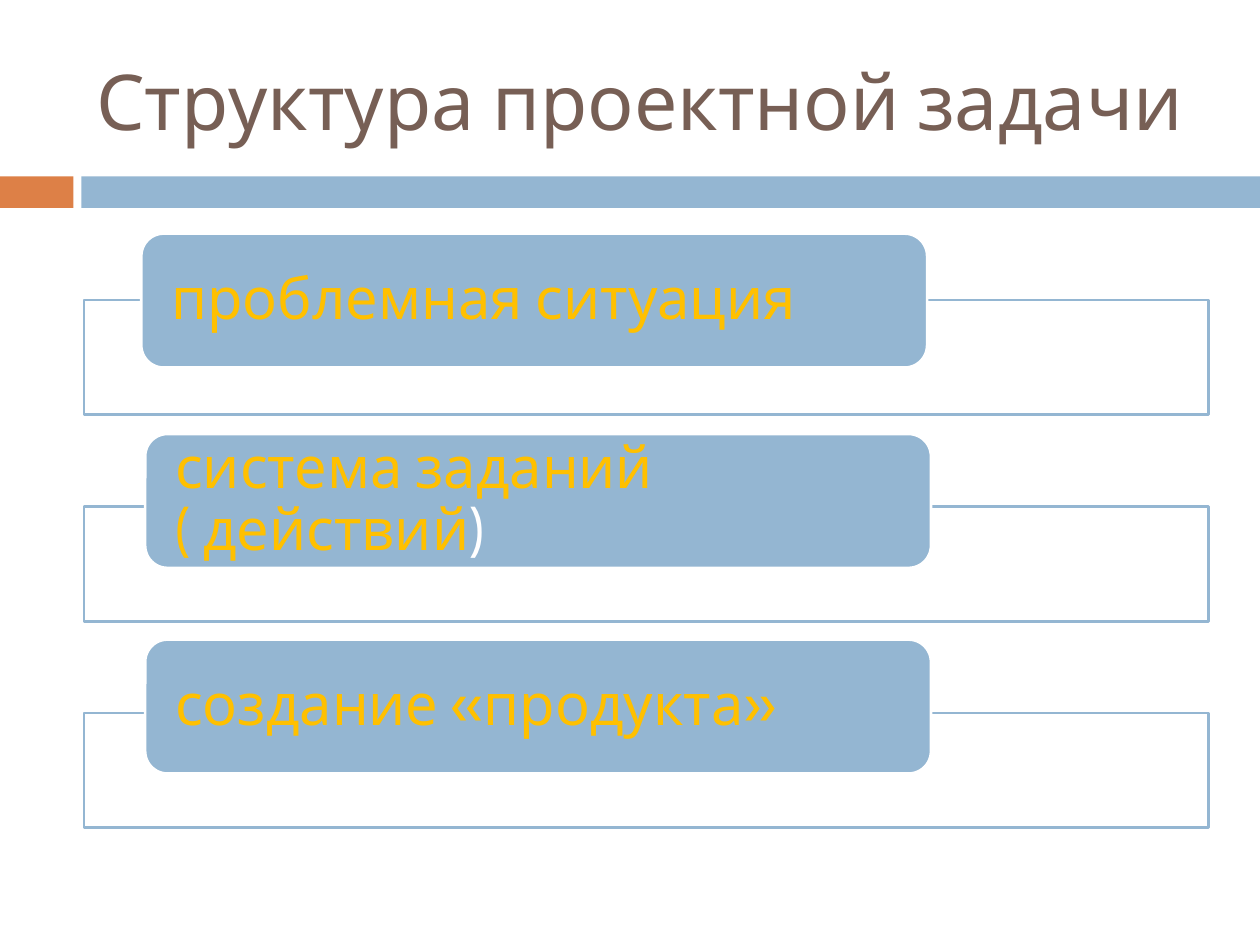
from dataclasses import dataclass

from lxml.etree import SubElement
from pptx import Presentation
from pptx.dml.color import RGBColor
from pptx.enum.shapes import MSO_SHAPE
from pptx.enum.text import MSO_ANCHOR, PP_ALIGN
from pptx.oxml.ns import qn
from pptx.util import Pt


@dataclass(frozen=True)
class Theme:
    font: str = "Cabin"
    title_size: int = 44
    label_size: int = 33
    brown: str = "775F55"
    orange: str = "DD8047"
    blue: str = "94B6D2"
    gold: str = "FFC000"
    white: str = "FFFFFF"


class SlideBuilder:
    def __init__(self, slide, theme):
        self.slide = slide
        self.theme = theme

    def box(self, kind, bounds, fill, line=None):
        shape = self.slide.shapes.add_shape(kind, *map(Pt, bounds))
        shape.shadow.inherit = False
        shape.fill.solid()
        shape.fill.fore_color.rgb = RGBColor.from_string(fill)
        if line:
            shape.line.color.rgb = RGBColor.from_string(line)
            shape.line.width = Pt(1.5)
        else:
            shape.line.fill.background()
        return shape

    def add_text(self, shape, parts, size, side_inset, vertical_inset):
        """Set (text, colour) parts as one left-aligned paragraph."""
        frame = shape.text_frame
        frame.word_wrap = True
        frame.vertical_anchor = MSO_ANCHOR.MIDDLE
        frame.margin_left = frame.margin_right = Pt(side_inset)
        frame.margin_top = frame.margin_bottom = Pt(vertical_inset)
        paragraph = frame.paragraphs[0]
        paragraph.alignment = PP_ALIGN.LEFT
        for text, color in parts:
            run = paragraph.add_run()
            run.text = text
            run.font.name = self.theme.font
            run.font.size = Pt(size)
            run.font.color.rgb = RGBColor.from_string(color)
        return paragraph

    def title(self, text, bounds):
        shape = self.slide.shapes.add_textbox(*map(Pt, bounds))
        self.add_text(shape, [(text, self.theme.brown)], self.theme.title_size, 7.2, 3.6)

    def frame(self, bounds):
        shape = self.box(MSO_SHAPE.RECTANGLE, bounds, self.theme.white, self.theme.blue)
        color = shape.element.spPr.find(qn("a:solidFill"))[0]
        SubElement(color, qn("a:alpha")).set("val", "90000")

    def label(self, parts, bounds):
        shape = self.box(MSO_SHAPE.ROUNDED_RECTANGLE, bounds, self.theme.blue, self.theme.white)
        paragraph = self.add_text(shape, parts, self.theme.label_size, 13.5, 0)
        paragraph.line_spacing = 0.9


def main():
    theme = Theme()
    presentation = Presentation()
    presentation.slide_width, presentation.slide_height = Pt(720), Pt(540)
    slide = presentation.slides.add_slide(presentation.slide_layouts[6])
    builder = SlideBuilder(slide, theme)

    # Header band and title
    builder.box(MSO_SHAPE.RECTANGLE, (0, 100.8, 42, 18), theme.orange)
    builder.box(MSO_SHAPE.RECTANGLE, (46.5, 100.8, 673.5, 18), theme.blue)
    builder.title("Структура проектной задачи", (48, 18, 642.5, 78))

    # Parts of the task: label position and text, over evenly spaced frames
    rows = [
        (80.8, 133.5, [("проблемная ситуация", theme.gold)]),
        (83, 248, [("система заданий ( действий", theme.gold), (")", theme.white)]),
        (83, 365.5, [("создание «продукта»", theme.gold)]),
    ]
    for index, (left, top, parts) in enumerate(rows):
        builder.frame((48, 171.5 + 118 * index, 642.5, 65.5))
        builder.label(parts, (left, top, 449, 76.5))

    presentation.save("out.pptx")


if __name__ == "__main__":
    main()
